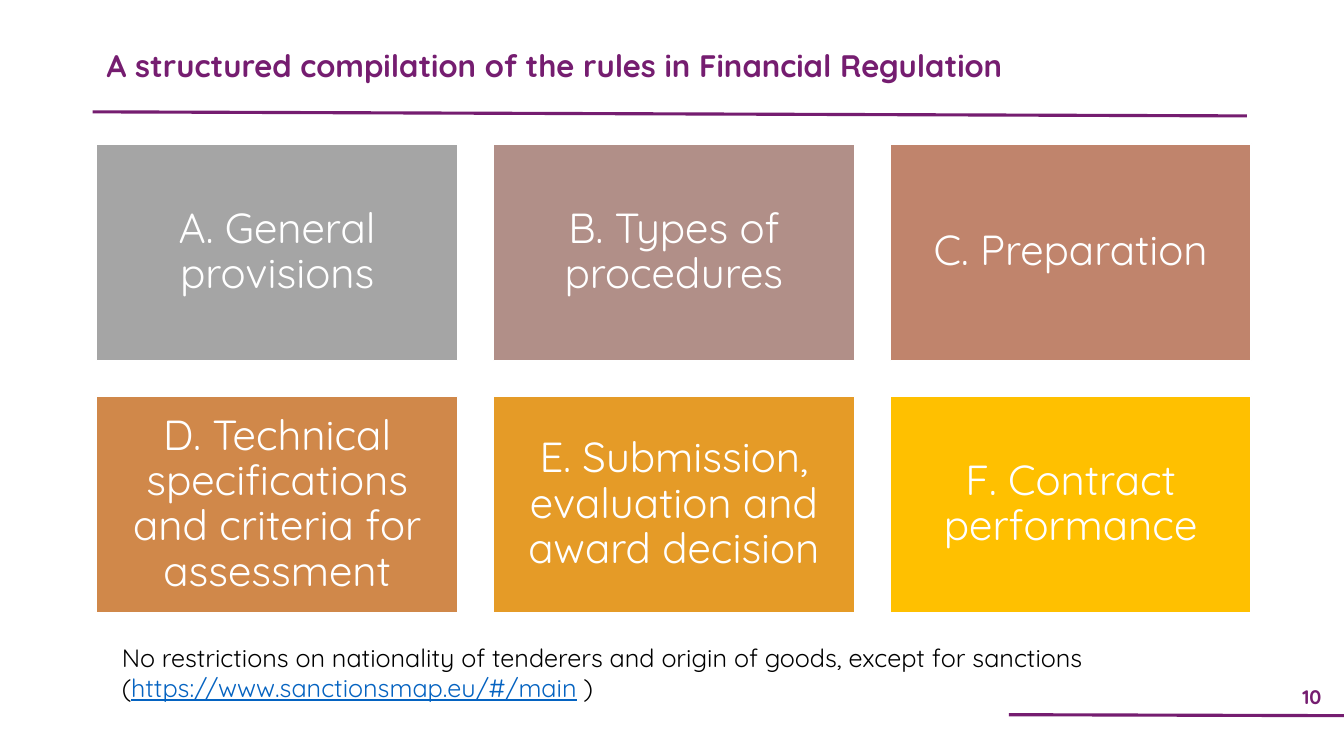
from pptx import Presentation
from pptx.dml.color import RGBColor
from pptx.enum.shapes import MSO_CONNECTOR, MSO_SHAPE
from pptx.enum.text import MSO_ANCHOR, PP_ALIGN
from pptx.oxml.ns import qn
from pptx.util import Pt
from lxml.etree import SubElement

PURPLE, WHITE, BLACK, LINK_BLUE = "751D70", "FFFFFF", "000000", "0563C1"


def rgb(hex_colour):
    return RGBColor.from_string(hex_colour)


def write(shape, text, size, colour, align, anchor=MSO_ANCHOR.TOP, bold=False):
    frame = shape.text_frame
    frame.word_wrap = True
    frame.vertical_anchor = anchor
    frame.text = text
    paragraph = frame.paragraphs[0]
    paragraph.alignment = align
    for run in paragraph.runs:
        run.font.name = "Quicksand"
        run.font.size = Pt(size)
        run.font.bold = bold
        run.font.color.rgb = rgb(colour)
    return paragraph


deck = Presentation()
deck.slide_width, deck.slide_height = Pt(960), Pt(540)
slide = deck.slides.add_slide(deck.slide_layouts[6])
shapes = slide.shapes

# Rules under the title and the page number
for x1, y1, x2, y2 in [(66.2, 79.9, 890.6, 82.8), (720.7, 510.5, 961.2, 511.2)]:
    rule = shapes.add_connector(MSO_CONNECTOR.STRAIGHT, Pt(x1), Pt(y1), Pt(x2), Pt(y2))
    rule.line.color.rgb = rgb(PURPLE)
    rule.line.width = Pt(2.25)
    SubElement(rule._element.spPr, qn("a:effectLst"))

# Page number
page_number = shapes.add_textbox(Pt(914.4), Pt(484.6), Pt(45.4), Pt(25.9))
write(page_number, "10", 14, PURPLE, PP_ALIGN.CENTER, MSO_ANCHOR.MIDDLE, bold=True)

# Title
title = shapes.add_textbox(Pt(69.1), Pt(34.6), Pt(700.6), Pt(30.2))
heading = write(title, "A structured compilation of the rules in Financial Regulation",
                22.2, PURPLE, PP_ALIGN.JUSTIFY, bold=True)
heading.line_spacing = 0.8

# Chapters, three to a row
chapters = [
    ("A. General provisions", "A5A5A5"),
    ("B. Types of procedures", "B18F88"),
    ("C. Preparation", "C0846C"),
    ("D. Technical specifications and criteria for assessment", "D0884A"),
    ("E. Submission, evaluation and award decision", "E59B27"),
    ("F. Contract performance", "FFC000"),
]
left, top, width, height, gap = 69.1, 102.8, 257.8, 154.7, 25.6
for index, (chapter, colour) in enumerate(chapters):
    row, column = divmod(index, 3)
    tile = shapes.add_shape(MSO_SHAPE.RECTANGLE,
                            Pt(left + column * (width + gap)), Pt(top + row * (height + gap)),
                            Pt(width), Pt(height))
    tile.shadow.inherit = False
    tile.fill.solid()
    tile.fill.fore_color.rgb = rgb(colour)
    tile.line.color.rgb = rgb(WHITE)
    tile.line.width = Pt(1)
    label = write(tile, chapter, 30, WHITE, PP_ALIGN.CENTER, MSO_ANCHOR.MIDDLE)
    label.line_spacing = 0.9
    frame = tile.text_frame
    frame.margin_left = frame.margin_right = frame.margin_top = frame.margin_bottom = Pt(9)

# Note on sanctions, with the address picked out
note = shapes.add_textbox(Pt(79.9), Pt(455), Pt(823.7), Pt(51.1))
sentence = write(note, "No restrictions on nationality of tenderers and origin of goods, "
                 "except for sanctions (", 18, BLACK, PP_ALIGN.LEFT)
for text, colour, underlined in [("https://www.sanctionsmap.eu/#/main", LINK_BLUE, True),
                                 (" )", BLACK, False)]:
    part = sentence.add_run()
    part.text = text
    part.font.name = "Quicksand"
    part.font.size = Pt(18)
    part.font.underline = underlined
    part.font.color.rgb = rgb(colour)

deck.save("out.pptx")
